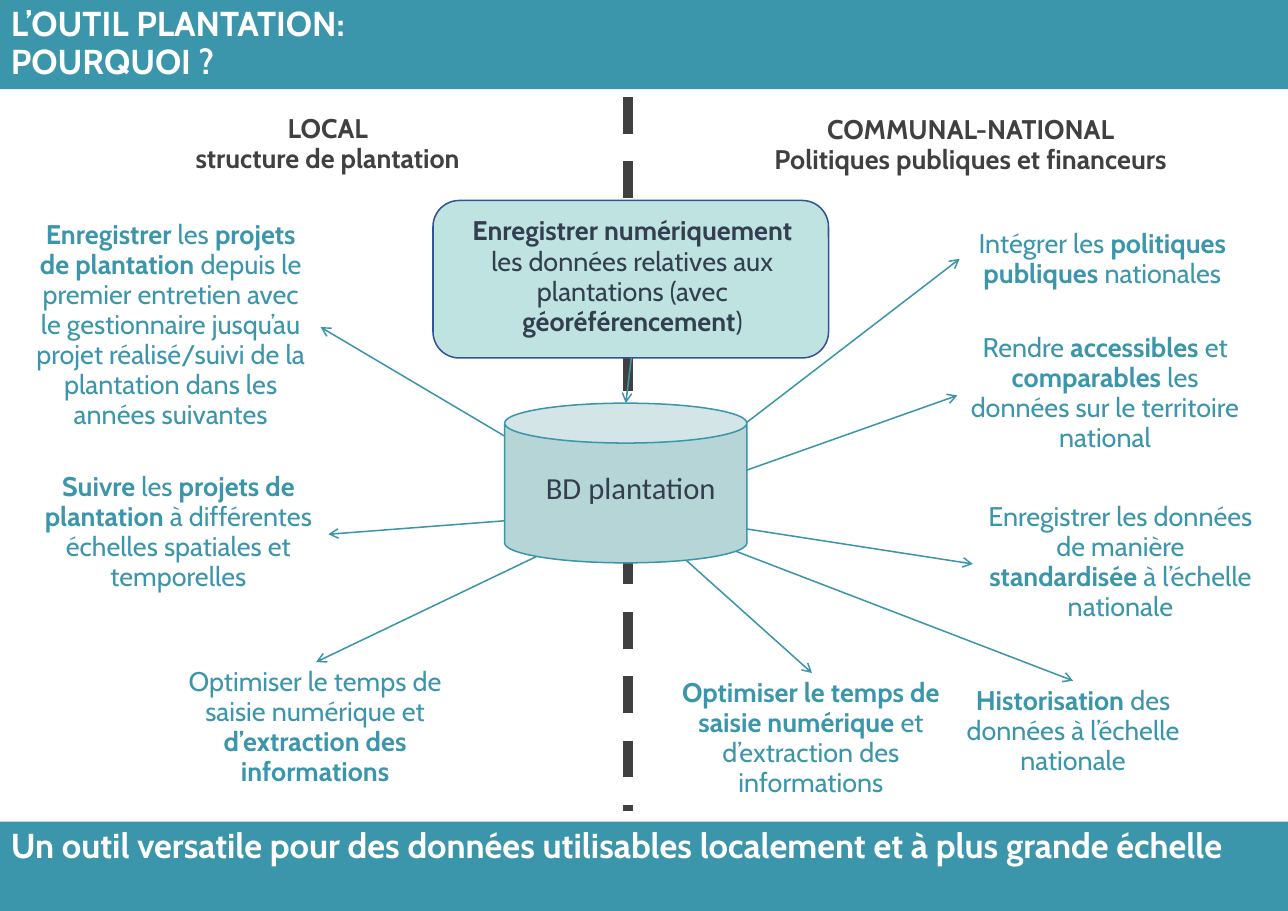
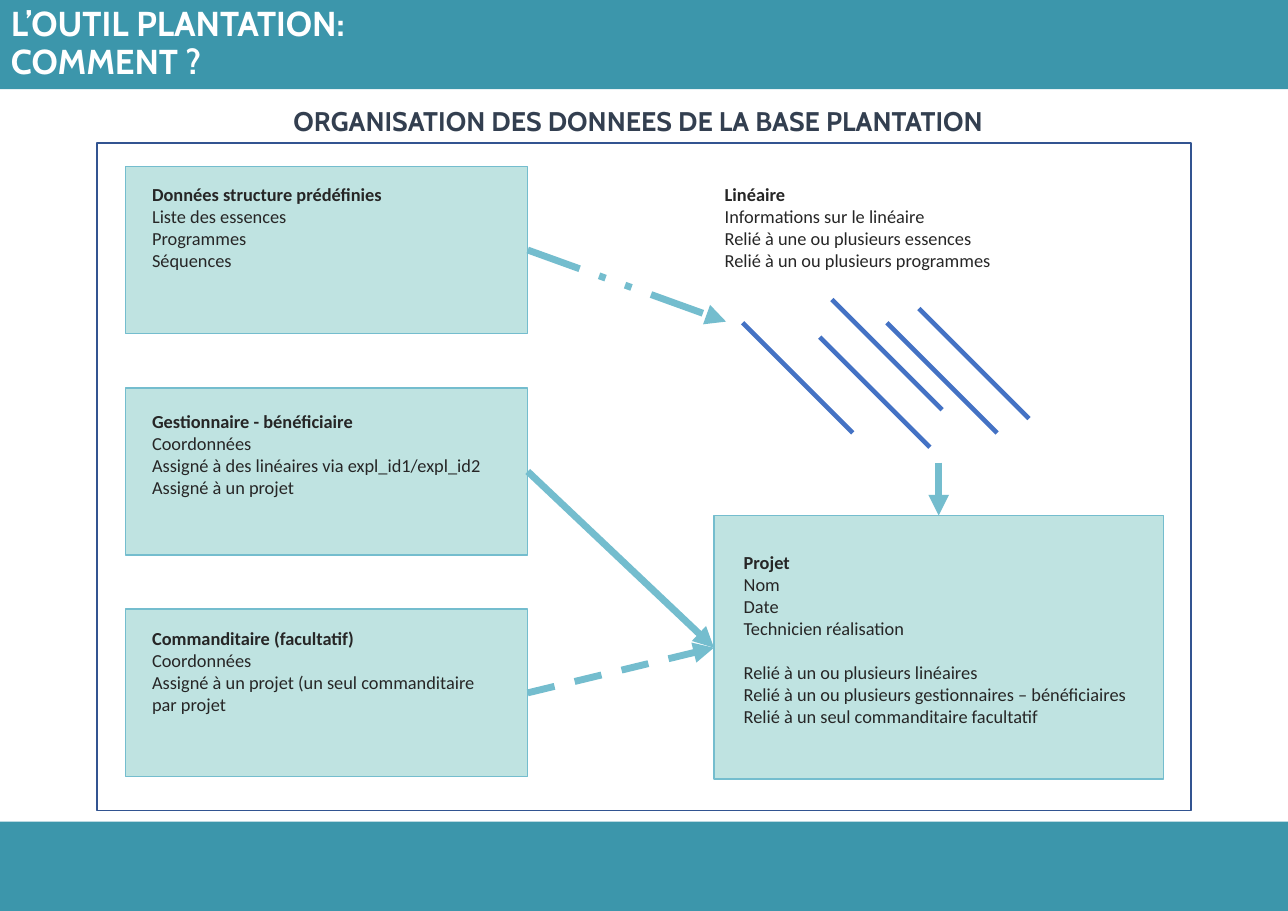
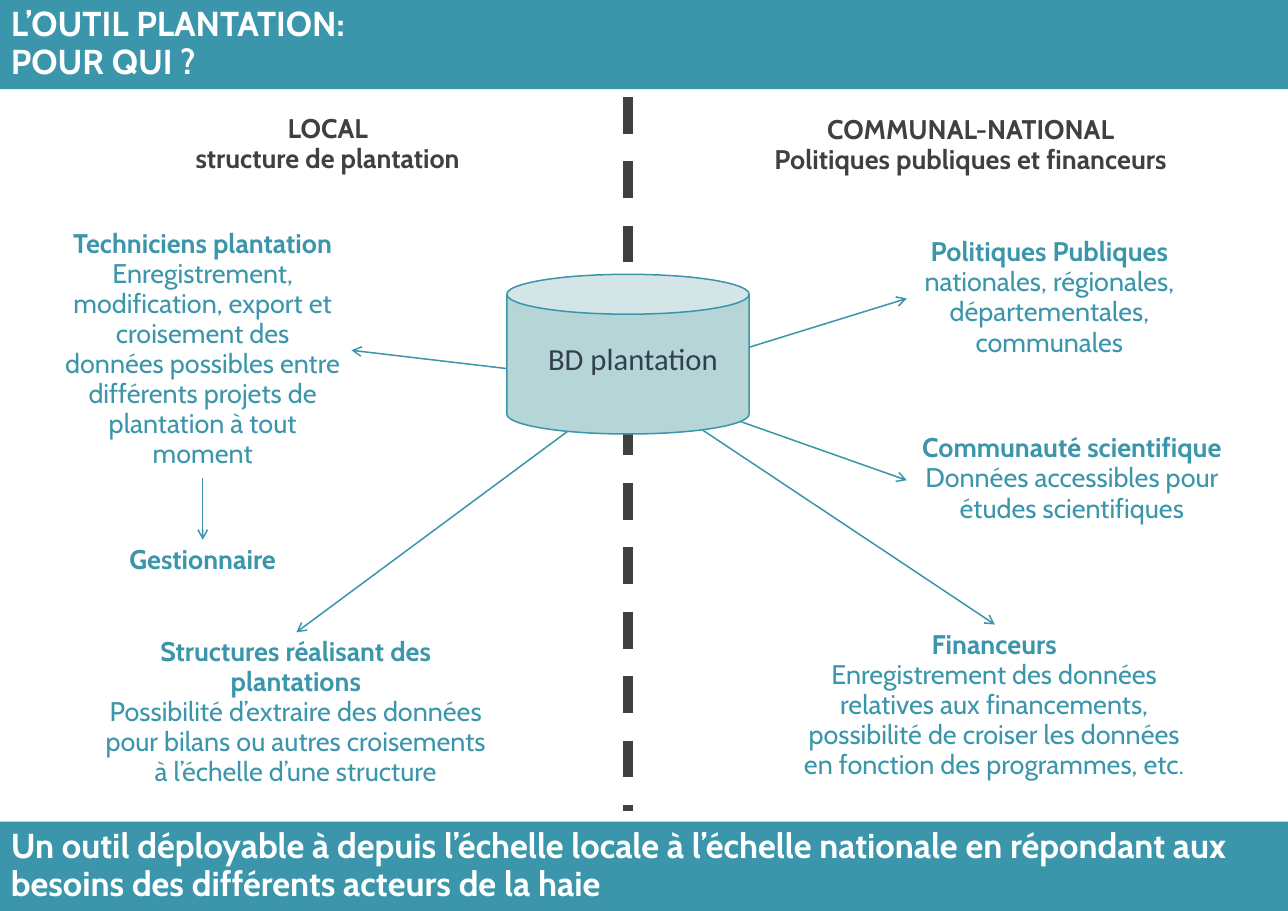
import pptx
import pptx.util
import pptx.dml.color
import pptx.enum.dml
import pptx.enum.shapes
import pptx.enum.text
import pptx.oxml.ns
import lxml.etree

Inches = pptx.util.Inches
SHAPE = pptx.enum.shapes.MSO_SHAPE
DASH = pptx.enum.dml.MSO_LINE
ALIGN = pptx.enum.text.PP_ALIGN

WIDTH, HEIGHT, BAND = 11.69, 8.27, 0.81
COLORS = {
    "teal": "3C96AB", "white": "FFFFFF", "grey": "404040", "slate": "333F50",
    "ink": "262626", "mint": "BFE3E1", "can": "B6D5D6", "sky": "74BDCE",
    "navy": "325491", "blue": "4472C4",
}
HEADING = dict(size=22.6, font="Cabin", color="white", spacing=0.93)
NOTE = dict(size=17.6, font="Cabin", color="teal", spacing=0.93, align=ALIGN.CENTER)
CARD = dict(size=12, font="Calibri", color="ink")
HUB = dict(size=20, font="Calibri", color="slate", align=ALIGN.CENTER)

# Text between ** marks is bold.
TITLES = {"why": "POURQUOI ?", "how": "COMMENT ?", "who": "POUR QUI ?"}
FOOTERS = {
    "why": "Un outil versatile pour des données utilisables localement et à plus grande échelle",
    "who": "Un outil déployable à depuis l’échelle locale à l’échelle nationale "
           "en répondant aux besoins des différents acteurs de la haie",
}
SIDES = [
    ((0.95, 0.99, 4.05, 0.65), ["**LOCAL**", "**structure de plantation**"]),
    ((6, 1, 5.62, 0.65), ["**COMMUNAL-NATIONAL**", "**Politiques publiques et financeurs**"]),
]

# Each note: box, arrow end (None for no arrow from the database), paragraphs
WHY_NOTES = [
    ((0.2, 1.95, 2.7, 2.03), (2.91, 2.97),
     ["**Enregistrer** les **projets de plantation** depuis le premier entretien avec le "
      "gestionnaire jusqu’au projet réalisé/suivi de la plantation dans les années suivantes"]),
    ((0.27, 4.24, 2.7, 1.21), (2.98, 4.85),
     ["**Suivre** les **projets de plantation** à différentes échelles spatiales et temporelles"]),
    ((1.52, 6.01, 2.68, 1.21), (2.87, 6.01),
     ["Optimiser le temps de saisie numérique et **d’extraction des informations**"]),
    ((8.71, 2.03, 2.59, 0.65), (8.71, 2.35),
     ["Intégrer les **politiques publiques** nationales"]),
    ((8.69, 2.98, 2.68, 1.21), (8.69, 3.59),
     ["Rendre **accessibles** et **comparables** les données sur le territoire national"]),
    ((8.83, 4.51, 2.68, 1.21), (8.83, 5.12),
     ["Enregistrer les données de manière **standardisée** à l’échelle nationale"]),
    ((8.4, 6.18, 2.68, 0.93), (9.74, 6.18),
     ["**Historisation** des données à l’échelle nationale"]),
    ((6.02, 6.11, 2.68, 1.21), (7.37, 6.11),
     ["**Optimiser le temps de saisie numérique** et d’extraction des informations"]),
]
WHY_INPUT = ["**Enregistrer numériquement** les données relatives aux plantations "
             "(avec **géoréférencement**)"]
WHO_NOTES = [
    ((0.49, 2.03, 2.7, 2.31), (3.19, 3.18),
     ["**Techniciens plantation**",
      "Enregistrement, modification, export et croisement des données possibles entre "
      "différents projets de plantation à tout moment"]),
    ((0.49, 4.9, 2.7, 0.38), None, ["**Gestionnaire**"]),
    ((0.78, 5.74, 3.81, 1.48), (2.69, 5.74),
     ["**Structures réalisant des plantations**",
      "Possibilité d’extraire des données pour bilans ou autres croisements "
      "à l’échelle d’une structure"]),
    ((8.23, 2.11, 2.59, 1.21), (8.23, 2.71),
     ["**Politiques Publiques** nationales, régionales, départementales, communales"]),
    ((8.23, 3.89, 3, 0.93), (8.23, 4.36),
     ["**Communauté scientifique**", "Données accessibles pour études scientifiques"]),
    ((7.11, 5.67, 3.83, 1.48), (9.03, 5.67),
     ["**Financeurs**",
      "Enregistrement des données relatives aux financements, possibilité de croiser "
      "les données en fonction des programmes, etc."]),
]

HOW_HEADING = ["**ORGANISATION DES DONNEES DE LA BASE PLANTATION**"]
# Each source card: paragraphs, top inset, arrow end, dash
SOURCES = [
    (["**Données structure prédéfinies**", "Liste des essences", "Programmes", "Séquences"],
     0.15, (6.59, 2.92), DASH.DASH_DOT_DOT),
    (["**Gestionnaire - bénéficiaire**", "Coordonnées",
      "Assigné à des linéaires via expl_id1/expl_id2", "Assigné à un projet"],
     0.2, (6.48, 5.88), None),
    (["**Commanditaire (facultatif)**", "Coordonnées",
      "Assigné à un projet (un seul commanditaire par projet"],
     0.16, (6.48, 5.88), DASH.DASH),
]
PROJECT = ["**Projet**", "Nom", "Date", "Technicien réalisation",
           "Relié à un ou plusieurs linéaires",
           "Relié à un ou plusieurs gestionnaires – bénéficiaires",
           "Relié à un seul commanditaire facultatif"]
HEDGEROW = ["**Linéaire**", "Informations sur le linéaire",
            "Relié à une ou plusieurs essences", "Relié à un ou plusieurs programmes"]
HEDGEROW_STARTS = [(6.74, 2.93), (7.44, 3.06), (7.55, 2.72), (8.05, 2.93), (8.34, 2.8)]


def rgb(name):
    return pptx.dml.color.RGBColor.from_string(COLORS[name])


def write(box, paragraphs, size, font, color, spacing=None, align=ALIGN.LEFT,
          insets=(0.1, 0.05, 0.1, 0.05), gaps=None):
    """Fill a box with text; gaps maps a paragraph index to the points before it."""
    frame = box.text_frame
    frame.word_wrap = True
    frame.vertical_anchor = pptx.enum.text.MSO_ANCHOR.TOP
    (frame.margin_left, frame.margin_top,
     frame.margin_right, frame.margin_bottom) = map(Inches, insets)
    for index, text in enumerate(paragraphs):
        para = frame.paragraphs[0] if index == 0 else frame.add_paragraph()
        para.alignment = align
        if spacing:
            para.line_spacing = spacing
        if gaps and index in gaps:
            para.space_before = pptx.util.Pt(gaps[index])
        for part, words in enumerate(text.split("**")):
            if words:
                span = para.add_run()
                span.text = words
                span.font.size = pptx.util.Pt(size)
                span.font.name = font
                span.font.bold = part % 2 == 1
                span.font.color.rgb = rgb(color)
    return box


def add_text(page, place, paragraphs, **style):
    return write(page.shapes.add_textbox(*map(Inches, place)), paragraphs, **style)


def add_box(page, kind, place, fill=None, line=None):
    box = page.shapes.add_shape(kind, *map(Inches, place))
    box.shadow.inherit = False
    if fill:
        box.fill.solid()
        box.fill.fore_color.rgb = rgb(fill)
    else:
        box.fill.background()
    if line:
        box.line.color.rgb = rgb(line)
        box.line.width = pptx.util.Pt(1)
    else:
        box.line.fill.background()
    return box


def add_line(page, start, end, color="teal", width=1, dash=None, head=None):
    line = page.shapes.add_connector(
        pptx.enum.shapes.MSO_CONNECTOR.STRAIGHT, *map(Inches, (*start, *end)))
    line.line.color.rgb = rgb(color)
    line.line.width = pptx.util.Pt(width)
    if dash:
        line.line.dash_style = dash
    qn = pptx.oxml.ns.qn
    properties = line._element.spPr
    if head:
        lxml.etree.SubElement(properties.find(qn("a:ln")), qn("a:tailEnd"), type=head)
    lxml.etree.SubElement(properties, qn("a:effectLst"))


def add_page(deck, key):
    """Add a slide with its title band and footer band."""
    page = deck.slides.add_slide(deck.slide_layouts[6])
    title = add_box(page, SHAPE.RECTANGLE, (0, 0, WIDTH, BAND), "teal")
    write(title, ["**L’OUTIL PLANTATION:**", f"**{TITLES[key]}**"], **HEADING)
    footer = add_box(page, SHAPE.RECTANGLE, (0, HEIGHT - BAND, WIDTH, BAND), "teal")
    if key in FOOTERS:
        write(footer, [f"**{FOOTERS[key]}**"], **HEADING)
    return page


def add_hub_diagram(page, notes, hub, can_left, can_top):
    """Draw the two sides, the notes, and arrows running from the database to them."""
    add_line(page, (5.7, 0.88), (5.7, 7.36), "grey", 6, DASH.DASH)
    for place, paragraphs in SIDES:
        add_text(page, place, paragraphs, **{**NOTE, "color": "grey"})
    for place, target, paragraphs in notes:
        if target:
            add_line(page, hub, target, head="arrow")
        add_text(page, place, paragraphs, **NOTE)
    add_box(page, SHAPE.CAN, (can_left, can_top, 2.2, 1.45), "can", "teal")
    add_text(page, (can_left - 0.1, can_top + 0.55, 2.49, 0.44), ["BD plantation"], **HUB)


def build_why(deck):
    page = add_page(deck, "why")
    add_hub_diagram(page, WHY_NOTES, (5.73, 4.64), 4.58, 3.66)
    entry = add_box(page, SHAPE.ROUNDED_RECTANGLE, (3.93, 1.82, 3.59, 1.43), "mint", "navy")
    write(entry, WHY_INPUT, **{**NOTE, "color": "slate"}, insets=(0.15, 0.08, 0.12, 0.05))
    add_line(page, (5.73, 3.25), (5.68, 3.66), head="arrow")


def build_how(deck):
    page = add_page(deck, "how")
    add_text(page, (0.83, 0.93, 9.93, 0.38), HOW_HEADING, **{**NOTE, "color": "slate"})
    add_box(page, SHAPE.RECTANGLE, (0.88, 1.3, 9.93, 6.06), line="navy")
    for x, y in HEDGEROW_STARTS:
        add_line(page, (x, y), (x + 1, y + 1), "blue", 3)
    add_text(page, (6.48, 1.61, 3.8, 0.91), HEDGEROW, **CARD)

    project = add_box(page, SHAPE.RECTANGLE, (6.48, 4.68, 4.08, 2.39), "mint", "sky")
    write(project, PROJECT, **CARD, insets=(0.27, 0.32, 0.2, 0.05), gaps={4: 14.6})

    left, first_top, width, height, step = 1.14, 1.51, 3.65, 1.52, 2.01
    arrow = dict(color="sky", width=4.5, head="triangle")
    for index, (paragraphs, inset, target, dash) in enumerate(SOURCES):
        top = first_top + index * step
        card = add_box(page, SHAPE.RECTANGLE, (left, top, width, height), "mint", "sky")
        write(card, paragraphs, **CARD, insets=(0.24, inset, 0.25, 0.05))
        add_line(page, (left + width, top + height / 2), target, dash=dash, **arrow)
    add_line(page, (8.52, 4.2), (8.52, 4.68), **arrow)


def build_who(deck):
    page = add_page(deck, "who")
    add_hub_diagram(page, WHO_NOTES, (5.74, 3.48), 4.6, 2.49)
    add_line(page, (1.84, 4.34), (1.84, 4.9), head="arrow")


def main():
    deck = pptx.Presentation()
    deck.slide_width, deck.slide_height = Inches(WIDTH), Inches(HEIGHT)
    for build in (build_why, build_how, build_who):
        build(deck)
    deck.save("out.pptx")


if __name__ == "__main__":
    main()
